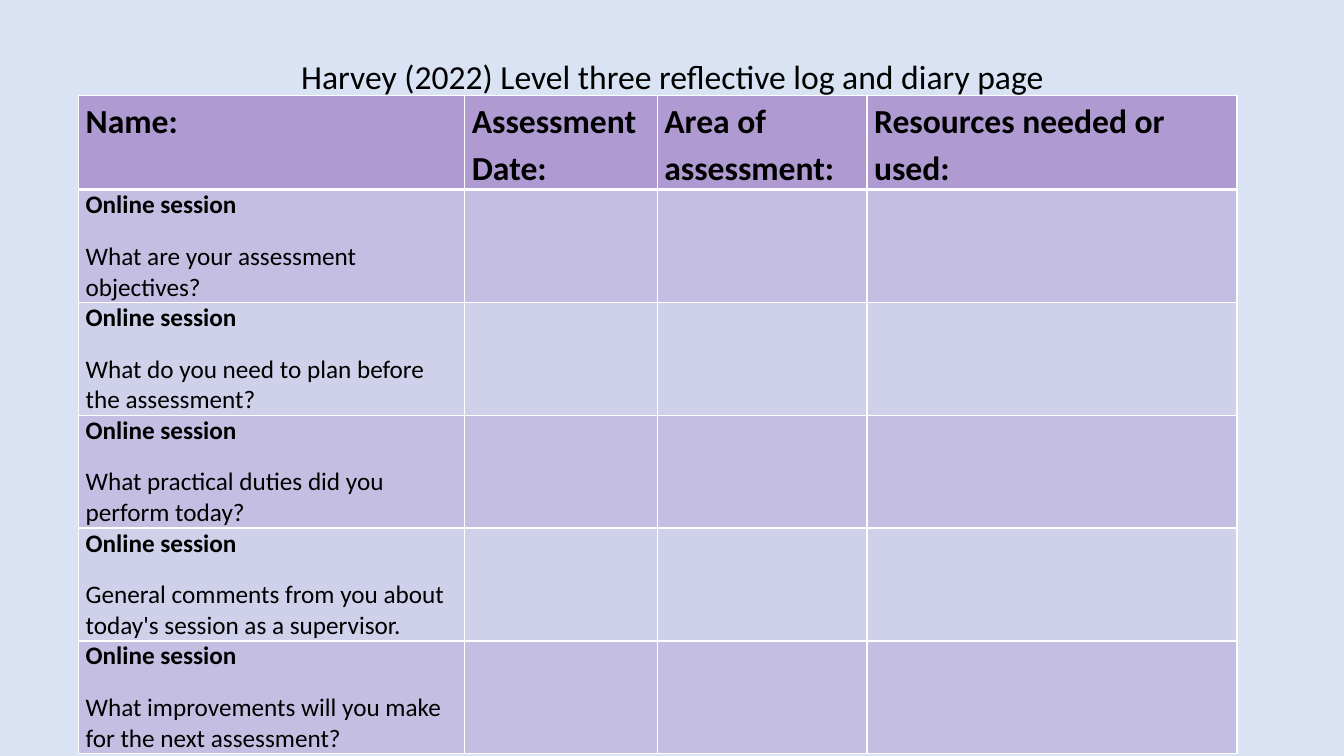
"""Build a reflective log slide with a title and a shaded table."""
import pptx
import pptx.dml.color
import pptx.enum.text
import pptx.oxml
import pptx.oxml.ns
import pptx.util

Inches = pptx.util.Inches
Pt = pptx.util.Pt
qn = pptx.oxml.ns.qn

HEADS = ["Name:", "Assessment Date:", "Area of assessment:", "Resources needed or used:"]
TASKS = [
    "What are your assessment objectives?",
    "What do you need to plan before the assessment?",
    "What practical duties did you perform today?",
    "General comments from you about today's session as a supervisor.",
    "What improvements will you make for the next assessment?",
]
WIDTHS = [3.83, 1.91, 2.08, 3.67]
HEAD_H, ROW_H = 0.93, 1.12


def color(code):
    return pptx.dml.color.RGBColor.from_string(code)


def write(par, text, font="Calibri", size=18, bold=False, ink="000000",
          align=None, line=None, before=None, after=None):
    par.alignment = align
    par.line_spacing = line
    if before is not None:
        par.space_before = Pt(before)
    if after is not None:
        par.space_after = Pt(after)
    run = par.add_run()
    run.text = text
    run.font.name = font
    run.font.size = Pt(size)
    run.font.bold = bold
    run.font.color.rgb = color(ink)


class Page:
    def __init__(self, deck, back="DAE3F3", tint="7030A0", rule="FFFFFF"):
        self.slide = deck.slides.add_slide(deck.slide_layouts[6])
        self.slide.background.fill.solid()
        self.slide.background.fill.fore_color.rgb = color(back)
        self.tint, self.rule = tint, rule

    def title(self, text, left, top, width, height):
        box = self.slide.shapes.add_textbox(
            Inches(left), Inches(top), Inches(width), Inches(height))
        frame = box.text_frame
        frame.word_wrap = True
        frame.vertical_anchor = pptx.enum.text.MSO_ANCHOR.MIDDLE
        frame.margin_bottom = Inches(0.75)
        write(frame.paragraphs[0], text, size=24, line=0.9,
              align=pptx.enum.text.PP_ALIGN.CENTER)

    def table(self, left, top, widths, heights):
        grid = self.slide.shapes.add_table(
            len(heights), len(widths), Inches(left), Inches(top),
            Inches(sum(widths)), Inches(sum(heights))).table
        grid.first_row = grid.horz_banding = False
        for col, width in zip(grid.columns, widths):
            col.width = Inches(width)
        for row, height in zip(grid.rows, heights):
            row.height = Inches(height)
        return grid

    def cell(self, cell, share, top=1, base=1):
        cell.margin_left = cell.margin_right = Inches(0.07)
        cell.margin_top = cell.margin_bottom = 0
        props = cell._tc.get_or_add_tcPr()
        for side, width in zip("LRTB", (1, 1, top, base)):
            props.append(pptx.oxml.parse_xml(
                f'<a:ln{side} {pptx.oxml.ns.nsdecls("a")} w="{Pt(width)}">'
                f'<a:solidFill><a:srgbClr val="{self.rule}"/></a:solidFill>'
                f'</a:ln{side}>'))
        cell.fill.solid()
        cell.fill.fore_color.rgb = color(self.tint)
        shade = props.find(qn("a:solidFill")).find(qn("a:srgbClr"))
        shade.append(pptx.oxml.parse_xml(
            f'<a:alpha {pptx.oxml.ns.nsdecls("a")} val="{share * 1000}"/>'))


def main():
    deck = pptx.Presentation()
    deck.slide_width, deck.slide_height = Inches(13.33), Inches(7.5)
    page = Page(deck)
    page.title("Harvey (2022) Level three reflective log and diary page",
               0.92, 0.4, 11.5, 1.45)
    grid = page.table(0.78, 0.95, WIDTHS, [HEAD_H] + [ROW_H] * len(TASKS))
    gaps = {"before": 5, "after": 10}
    for col, head in enumerate(HEADS):
        cell = grid.cell(0, col)
        page.cell(cell, 40, base=3)
        write(cell.text_frame.paragraphs[0], head, size=24, bold=True, line=1.15, **gaps)
    for row, task in enumerate(TASKS, 1):
        for col in range(len(HEADS)):
            page.cell(grid.cell(row, col), 20 if row % 2 else 10,
                      top=3 if row == 1 else 1)
        frame = grid.cell(row, 0).text_frame
        write(frame.paragraphs[0], "Online session", bold=True, **gaps)
        write(frame.add_paragraph(), task, **gaps)
    deck.save("out.pptx")


if __name__ == "__main__":
    main()
